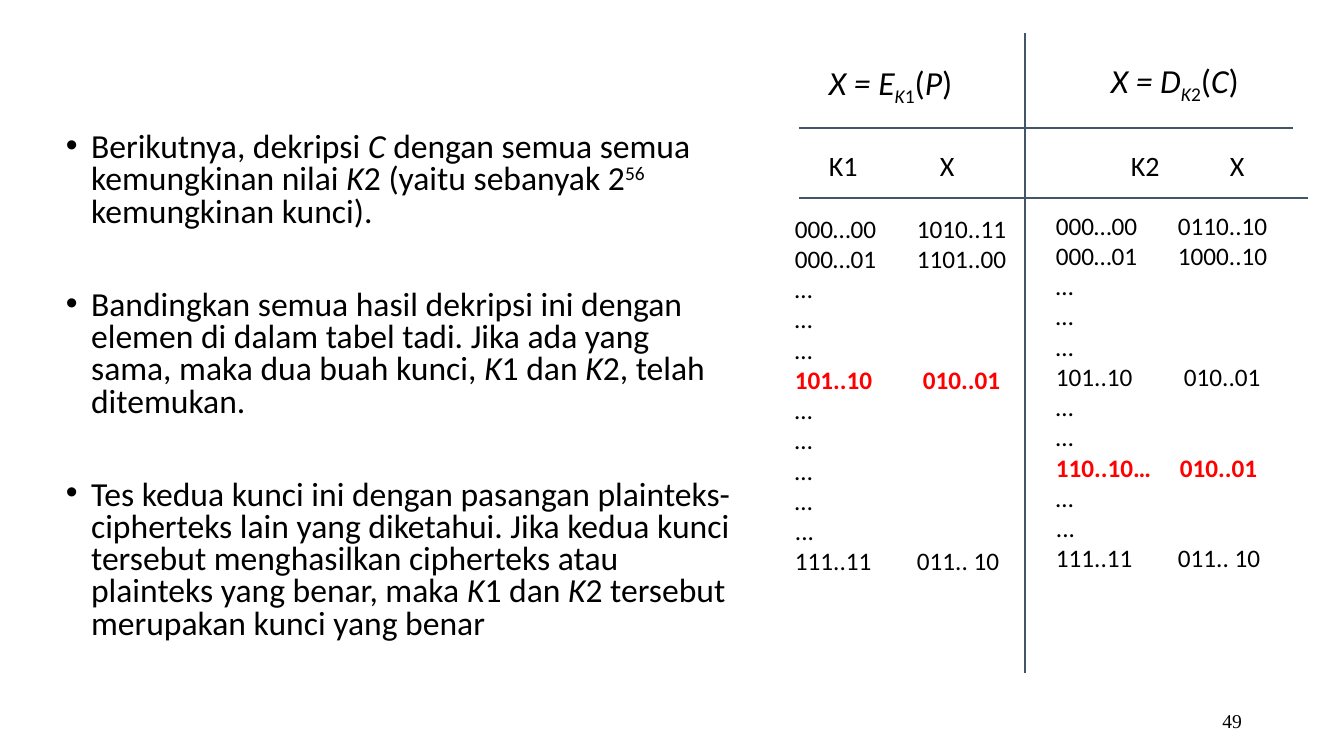
from lxml import etree
from pptx import Presentation
from pptx import util as u
from pptx.dml.color import RGBColor
from pptx.enum import shapes, text
from pptx.oxml.ns import qn

BLACK = RGBColor(0x00, 0x00, 0x00)
RED = RGBColor(0xFF, 0x00, 0x00)
SLATE = RGBColor(0x44, 0x54, 0x6A)
PX = 914400 / 100.8

# Content: runs are (text, style); style holds i = italic, - = subscript, + = superscript
BULLETS = [
    [("Berikutnya, dekripsi ", ""), ("C ", "i"),
     ("dengan semua semua kemungkinan nilai ", ""), ("K", "i"),
     ("2 (yaitu sebanyak 2", ""), ("56 ", "+"), ("kemungkinan kunci).", "")],
    [("Bandingkan semua hasil dekripsi ini dengan elemen di dalam tabel tadi. "
      "Jika ada yang sama, maka dua buah kunci, ", ""), ("K", "i"),
     ("1 dan ", ""), ("K", "i"), ("2, telah ditemukan.", "")],
    [("Tes kedua kunci ini dengan pasangan plainteks-cipherteks lain yang diketahui. "
      "Jika kedua kunci tersebut menghasilkan cipherteks atau plainteks yang benar, "
      "maka ", ""), ("K", "i"), ("1 dan ", ""), ("K", "i"),
     ("2 tersebut merupakan kunci yang benar", "")],
]
FORMULAS = [  # box, runs
    ((819, 57, 148, 50), [("X = E", "i"), ("K", "i-"), ("1", "-"),
                          ("(", ""), ("P", "i"), (")", "")]),
    ((1101, 55, 152, 50), [("X = D", "i"), ("K", "i-"), ("2", "-"),
                           ("(", ""), ("C", "i"), (")", "")]),
]
HEADINGS = "K1\tX\tK2\tX"
HEADING_TABS = [111, 302, 401]
KEY_LISTS = [  # box, highlighted row, rows of (text, tab stop)
    ((785, 208, 233, 377), 5,
     [("000…00\t1010..11", 122), ("000…01\t1101..00", 122), ("…", 0), ("…", 0),
      ("…", 0), ("101..10\t010..01", 128), ("…", 0), ("…", 0), ("…", 0),
      ("…", 0), ("...", 0), ("111..11\t011.. 10", 122)]),
    ((1046, 205, 233, 377), 8,
     [("000…00\t0110..10", 122), ("000…01\t1000..10", 122), ("…", 0), ("…", 0),
      ("…", 0), ("101..10\t010..01", 128), ("…", 0), ("…", 0),
      ("110..10…\t010..01", 124), ("…", 0), ("...", 0),
      ("111..11\t011.. 10", 122)]),
]
RULES = [(799, 128, 1293, 128), (799, 198, 1308, 198), (1025, 33, 1025, 673)]


def px(n):
    return u.Emu(round(n * PX))


def add_box(box):
    sp = s.shapes.add_textbox(*map(px, box))
    sp.text_frame.word_wrap = True
    return sp.text_frame


def style_run(r, size, style="", color=BLACK, bold=False, font="Calibri"):
    r.font.name, r.font.size, r.font.bold = font, u.Pt(size), bold
    r.font.italic = "i" in style
    r.font.color.rgb = color
    for mark, baseline in (("+", "30000"), ("-", "-25000")):
        if mark in style:
            r.font._element.set("baseline", baseline)


def add_runs(p, runs):
    for words, style in runs:
        r = p.add_run()
        r.text = words
        style_run(r, 24, style)


def set_tabs(p, stops):
    tabs = etree.SubElement(p._p.get_or_add_pPr(), qn("a:tabLst"))
    for stop in stops:
        etree.SubElement(tabs, qn("a:tab"), pos=str(px(stop)), algn="l")


prs = Presentation()
prs.slide_width, prs.slide_height = px(1344), px(756)
s = prs.slides.add_slide(prs.slide_layouts[6])

# Bulleted explanation
tf = add_box((56, 128, 685, 556))
for i, runs in enumerate(BULLETS):
    p = tf.add_paragraph() if i else tf.paragraphs[0]
    p.line_spacing = 0.8
    p.space_before = u.Pt(43.4 if i else 10)
    pPr = p._p.get_or_add_pPr()
    pPr.set("marL", "228600")
    pPr.set("indent", "-228600")
    etree.SubElement(pPr, qn("a:buFont"), typeface="Arial")
    etree.SubElement(pPr, qn("a:buChar"), char="•")
    add_runs(p, runs)

# Rules of the two key tables
for x1, y1, x2, y2 in RULES:
    line = s.shapes.add_connector(shapes.MSO_CONNECTOR.STRAIGHT,
                                  px(x1), px(y1), px(x2), px(y2))
    line.line.color.rgb = SLATE
    line.line.width = u.Pt(1)
    etree.SubElement(line._element.spPr, qn("a:effectLst"))

# Formulas and column headings
for box, runs in FORMULAS:
    add_runs(add_box(box).paragraphs[0], runs)
p = add_box((819, 144, 452, 44)).paragraphs[0]
p.text = HEADINGS
set_tabs(p, HEADING_TABS)
style_run(p.runs[0], 20)

# Key lists
for box, match, rows in KEY_LISTS:
    tf = add_box(box)
    tf.text = "\n".join(row for row, _ in rows)
    for i, (p, (_, stop)) in enumerate(zip(tf.paragraphs, rows)):
        if stop:
            set_tabs(p, [stop])
        style_run(p.runs[0], 18, color=RED if i == match else BLACK, bold=i == match)

# Page number
tf = add_box((950, 701, 302, 40))
tf.vertical_anchor = text.MSO_ANCHOR.MIDDLE
tf.text = "49"
tf.paragraphs[0].alignment = text.PP_ALIGN.RIGHT
style_run(tf.paragraphs[0].runs[0], 14, font="Times New Roman")

prs.save("out.pptx")
